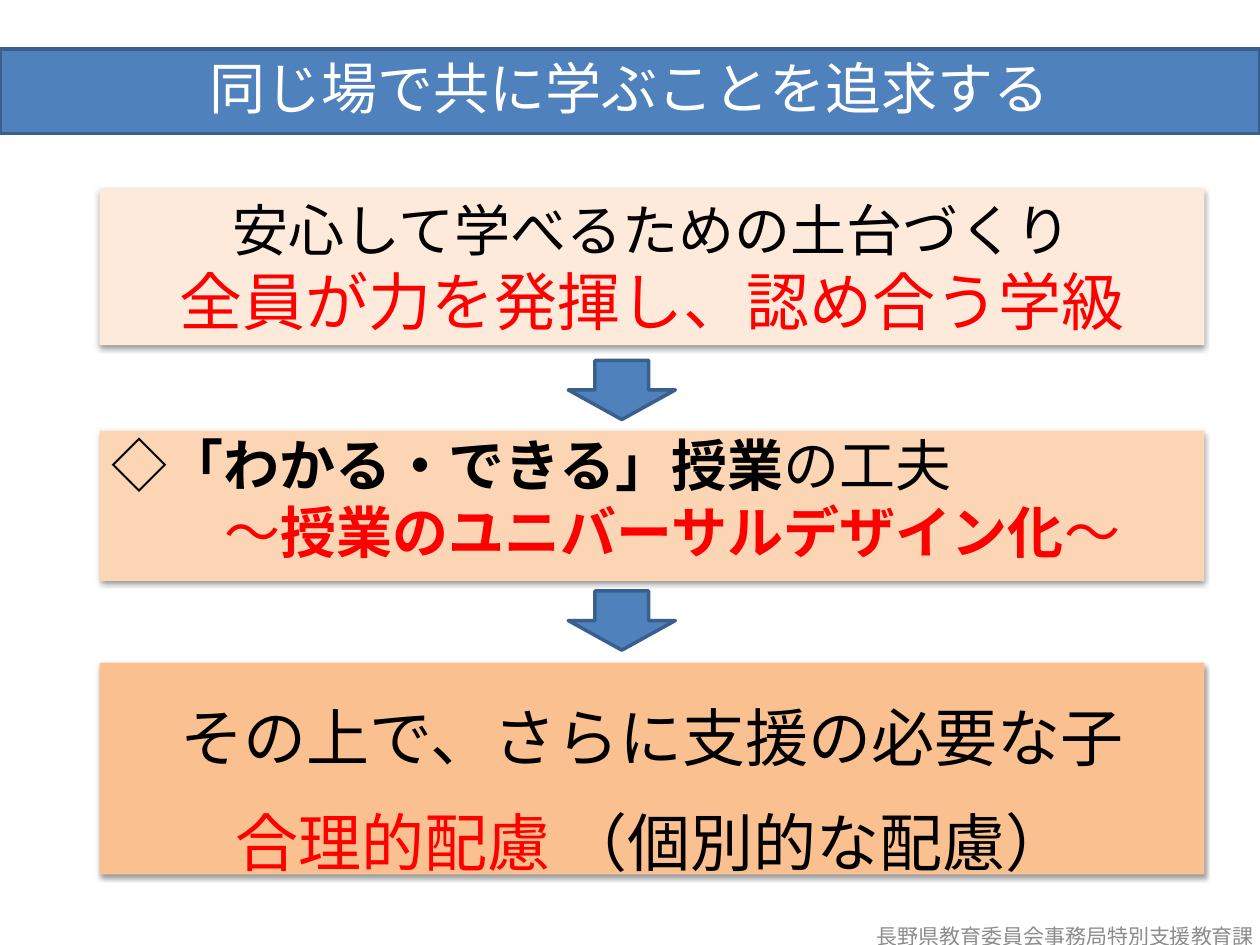
from lxml import etree
from pptx import Presentation
from pptx.dml.color import RGBColor
from pptx.enum.lang import MSO_LANGUAGE_ID as Language
from pptx.enum.shapes import MSO_SHAPE as Shape
from pptx.enum.text import MSO_ANCHOR as Anchor, PP_ALIGN as Align
from pptx.oxml import parse_xml
from pptx.oxml.ns import qn
from pptx.util import Inches, Pt

BLACK = RGBColor(0x00, 0x00, 0x00)
WHITE = RGBColor(0xFF, 0xFF, 0xFF)
RED = RGBColor(0xFF, 0x00, 0x00)
GRAY = RGBColor(0x8C, 0x8C, 0x8C)
BLUE = RGBColor(0x4F, 0x81, 0xBD)
DARK_BLUE = RGBColor(0x3A, 0x5F, 0x8C)
LIGHT_PEACH = RGBColor(0xFD, 0xEA, 0xDA)
PEACH = RGBColor(0xFC, 0xD5, 0xB5)
ORANGE = RGBColor(0xFA, 0xC0, 0x90)
NOTO = "Noto Sans CJK JP"
SOFT_SHADOW = (
    '<a:effectLst xmlns:a="http://schemas.openxmlformats.org/drawingml/2006/main">'
    '<a:outerShdw blurRad="39370" dist="20320" dir="5400000" rotWithShape="0">'
    '<a:srgbClr val="000000"><a:alpha val="38000"/></a:srgbClr>'
    '</a:outerShdw></a:effectLst>')


def add_block(kind, left, top, width, height, fill, line=None):
    block = slide.shapes.add_shape(
        kind, Inches(left), Inches(top), Inches(width), Inches(height))
    block.shadow.inherit = False
    block.fill.solid()
    block.fill.fore_color.rgb = fill
    if line is None:
        block.line.fill.background()
    else:
        block.line.color.rgb = line
        block.line.width = Pt(2)
    return block


def write_lines(box, lines, anchor):
    """Each line is (alignment, spacing, runs); a run is (text, size, font, colour, bold)."""
    frame = box.text_frame
    frame.word_wrap = True
    frame.vertical_anchor = anchor
    for index, (align, spacing, runs) in enumerate(lines):
        para = frame.paragraphs[0] if index == 0 else frame.add_paragraph()
        para.alignment = align
        para.line_spacing = spacing
        for text, size, name, color, bold in runs:
            span = para.add_run()
            span.text = text
            font = span.font
            font.size, font.name, font.bold = Pt(size), name, bold
            font.color.rgb = color
            font.language_id = Language.JAPANESE
            # East Asian text takes the same typeface
            east_asian = etree.Element(qn("a:ea"), typeface=name)
            span._r.rPr.find(qn("a:latin")).addnext(east_asian)


deck = Presentation()
deck.slide_width, deck.slide_height = Inches(10), Inches(7.5)
slide = deck.slides.add_slide(deck.slide_layouts[6])

# Three stages, from foundation to individual support
stages = [
    (1.5, 1.24, LIGHT_PEACH, Anchor.TOP, [
        (Align.CENTER, None, [("安心して学べるための土台づくり", 32, "Calibri", BLACK, False)]),
        (Align.CENTER, None, [("全員が力を発揮し、認め合う学級", 36, "Calibri", RED, False)]),
    ]),
    (3.42, 1.19, PEACH, Anchor.MIDDLE, [
        (Align.LEFT, Pt(29), [("◇", 32, "Arial", BLACK, False),
                              ("「わかる・できる」授業", 32, "Arial", BLACK, True),
                              ("の工夫", 32, "Arial", BLACK, False)]),
        (Align.LEFT, None, [("～", 32, "Calibri", RED, False),
                            ("授業のユニバーサルデザイン化", 32, "Calibri", RED, True),
                            ("～", 32, "Calibri", RED, False)]),
    ]),
    (5.26, 1.68, ORANGE, Anchor.TOP, [
        (Align.CENTER, Pt(60), [("その上で、さらに支援の必要な子", 36, NOTO, BLACK, False)]),
        (Align.CENTER, Pt(60), [("合理的配慮 ", 36, NOTO, RED, False),
                                ("（個別的な配慮）", 36, NOTO, BLACK, False)]),
    ]),
]
stage_boxes = []
for top, height, fill, anchor, lines in stages:
    box = add_block(Shape.RECTANGLE, 0.79, top, 8.77, height, fill)
    box._element.spPr.replace(
        box._element.spPr.find(qn("a:effectLst")), parse_xml(SOFT_SHADOW))
    write_lines(box, lines, anchor)
    stage_boxes.append(box)

# Indent the subtitle of the lesson stage by two characters
subtitle = stage_boxes[1].text_frame.paragraphs[1]
subtitle._p.get_or_add_pPr().set("marL", str(Inches(0.89)))

# Arrows between the stages
for top in (2.86, 4.69):
    add_block(Shape.DOWN_ARROW, 4.51, top, 0.85, 0.47, BLUE, DARK_BLUE)

# Title band
title = add_block(Shape.RECTANGLE, 0, 0.39, 10, 0.67, BLUE, DARK_BLUE)
write_lines(title, [(Align.CENTER, 0.9, [
    ("同じ場で共に学ぶことを追求する", 32, NOTO, WHITE, False)])], Anchor.MIDDLE)

# Footer
footer = slide.shapes.add_textbox(Inches(6.66), Inches(7.23), Inches(3.59), Inches(0.4))
write_lines(footer, [(Align.CENTER, None, [
    ("長野県教育委員会事務局特別支援教育課", 12, "Calibri", GRAY, False)])], Anchor.MIDDLE)

deck.save("out.pptx")
